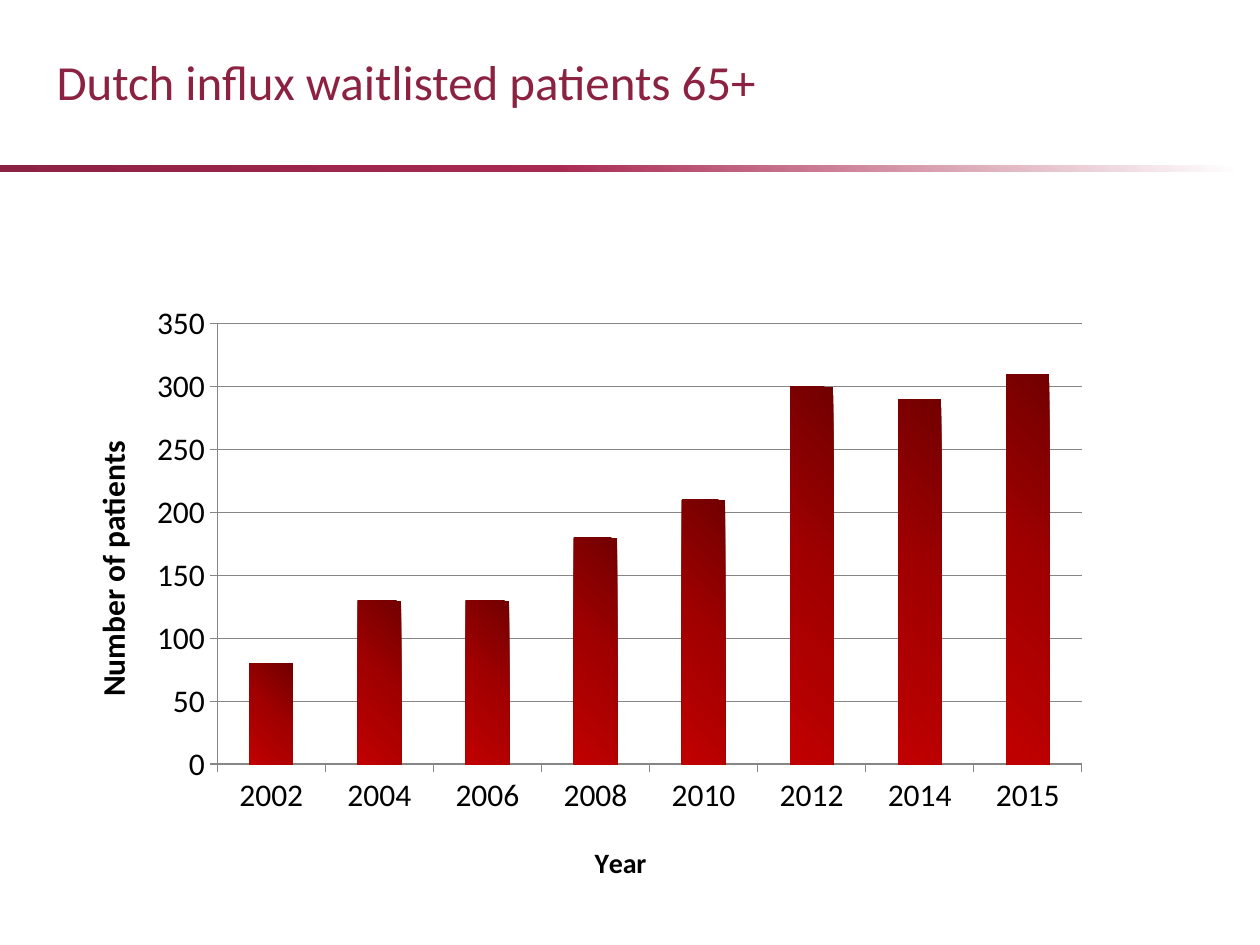
from lxml.etree import SubElement
from pptx import Presentation
from pptx.chart.data import CategoryChartData
from pptx.dml.color import RGBColor
from pptx.enum.chart import XL_CHART_TYPE as ChartType, XL_TICK_MARK as TickMark
from pptx.enum.shapes import MSO_SHAPE as Shape
from pptx.enum.text import MSO_AUTO_SIZE as AutoSize
from pptx.oxml.ns import qn
from pptx.util import Inches, Pt

PATIENTS = {"2002": 80, "2004": 130, "2006": 130, "2008": 180,
            "2010": 210, "2012": 300, "2014": 290, "2015": 310}
BAR_STOPS = [(0, "720000"), (50, "A20000"), (100, "C00000")]
RULE_STOPS = [(2, "FFFFFF"), (56, "A92A50"), (100, "8C2242")]


def color(value):
    return RGBColor.from_string(value)


def set_values(target, values):
    for name, value in values.items():
        setattr(target, name, value)


def set_gradient(fill, properties, stops, angle):
    """Fill with any number of stops; the angle runs clockwise in degrees."""
    fill.solid()
    solid = properties.find(qn("a:solidFill"))
    gradient = SubElement(properties, qn("a:gradFill"), rotWithShape="1")
    stop_list = SubElement(gradient, qn("a:gsLst"))
    for position, value in stops:
        stop = SubElement(stop_list, qn("a:gs"), pos=str(position * 1000))
        SubElement(stop, qn("a:srgbClr"), val=value)
    SubElement(gradient, qn("a:lin"), ang=str(angle * 60000), scaled="0")
    properties.replace(solid, gradient)


def set_layout(parent, index, **shares):
    """Place a chart part by shares of the chart's size."""
    for old in parent.findall(qn("c:layout")):
        parent.remove(old)
    layout = SubElement(parent, qn("c:layout"))
    manual = SubElement(layout, qn("c:manualLayout"))
    if "w" in shares:
        SubElement(manual, qn("c:layoutTarget"), val="inner")
    for mode in ("xMode", "yMode"):
        SubElement(manual, qn(f"c:{mode}"), val="edge")
    for name, share in shares.items():
        SubElement(manual, qn(f"c:{name}"), val=str(share))
    parent.insert(index, layout)


class SlideBuilder:
    """Holds the style and the slide; boxes are shares of the slide's size."""
    font = "Calibri"
    text_color = "000000"
    title_color = "8C2242"
    line_color = "868686"

    def __init__(self, presentation):
        self.size = presentation.slide_width, presentation.slide_height
        self.slide = presentation.slides.add_slide(presentation.slide_layouts[6])

    def box(self, *shares):
        return [round(share * side) for share, side in zip(shares, self.size * 2)]

    def style_font(self, font, size, value, bold=False):
        set_values(font, {"name": self.font, "size": Pt(size), "bold": bold})
        font.color.rgb = color(value)

    def title(self, text, *shares):
        frame = self.slide.shapes.add_textbox(*self.box(*shares)).text_frame
        set_values(frame, {"word_wrap": True, "auto_size": AutoSize.SHAPE_TO_FIT_TEXT})
        run = frame.paragraphs[0].add_run()
        run.text = text
        self.style_font(run.font, 28, self.title_color)

    def rule(self, *shares):
        shape = self.slide.shapes.add_shape(Shape.RECTANGLE, *self.box(*shares))
        shape.shadow.inherit = False
        shape.line.fill.background()
        set_gradient(shape.fill, shape._element.spPr, RULE_STOPS, 130)

    def axis(self, axis, text, size, x, y, gridlines):
        set_values(axis, {"major_tick_mark": TickMark.OUTSIDE,
                          "minor_tick_mark": TickMark.NONE,
                          "has_major_gridlines": gridlines})
        lines = [axis.format.line]
        if gridlines:
            lines.append(axis.major_gridlines.format.line)
        for line in lines:
            line.width = Pt(0.75)
            line.color.rgb = color(self.line_color)
        self.style_font(axis.tick_labels.font, 18, self.text_color)
        run = axis.axis_title.text_frame.paragraphs[0].add_run()
        run.text = text
        self.style_font(run.font, size, self.text_color, bold=True)
        set_layout(axis.axis_title._element, 1, x=x, y=y)

    def column_chart(self, values, *shares):
        data = CategoryChartData()
        data.categories = list(values)
        data.add_series("Series 1", list(values.values()))
        chart = self.slide.shapes.add_chart(
            ChartType.COLUMN_CLUSTERED, *self.box(*shares), data).chart
        set_values(chart, {"has_legend": False, "has_title": False})
        self.style_font(chart.font, 18, self.text_color)
        plot = chart.plots[0]
        set_values(plot, {"gap_width": 150, "vary_by_categories": False})
        series = plot.series[0]
        set_gradient(series.format.fill, series._element.spPr, BAR_STOPS, 135)
        set_values(chart.value_axis, {"minimum_scale": 0, "maximum_scale": 350,
                                      "major_unit": 50})
        self.axis(chart.category_axis, "Year", 16, 0.47, 0.93, False)
        self.axis(chart.value_axis, "Number of patients", 18, 0.05, 0.39, True)
        set_layout(chart._chartSpace.chart.plotArea, 0,
                   x=0.16, y=0.24, w=0.72, h=0.59)


def main():
    presentation = Presentation()
    set_values(presentation, {"slide_width": Inches(10), "slide_height": Inches(7.5)})
    builder = SlideBuilder(presentation)
    builder.column_chart(PATIENTS, 0.02, 0.153, 0.953, 0.79)
    builder.rule(0, 0.175, 1, 0.007)
    builder.title("Dutch influx waitlisted patients 65+", 0.035, 0.048, 0.965, 0.076)
    presentation.save("out.pptx")


if __name__ == "__main__":
    main()
